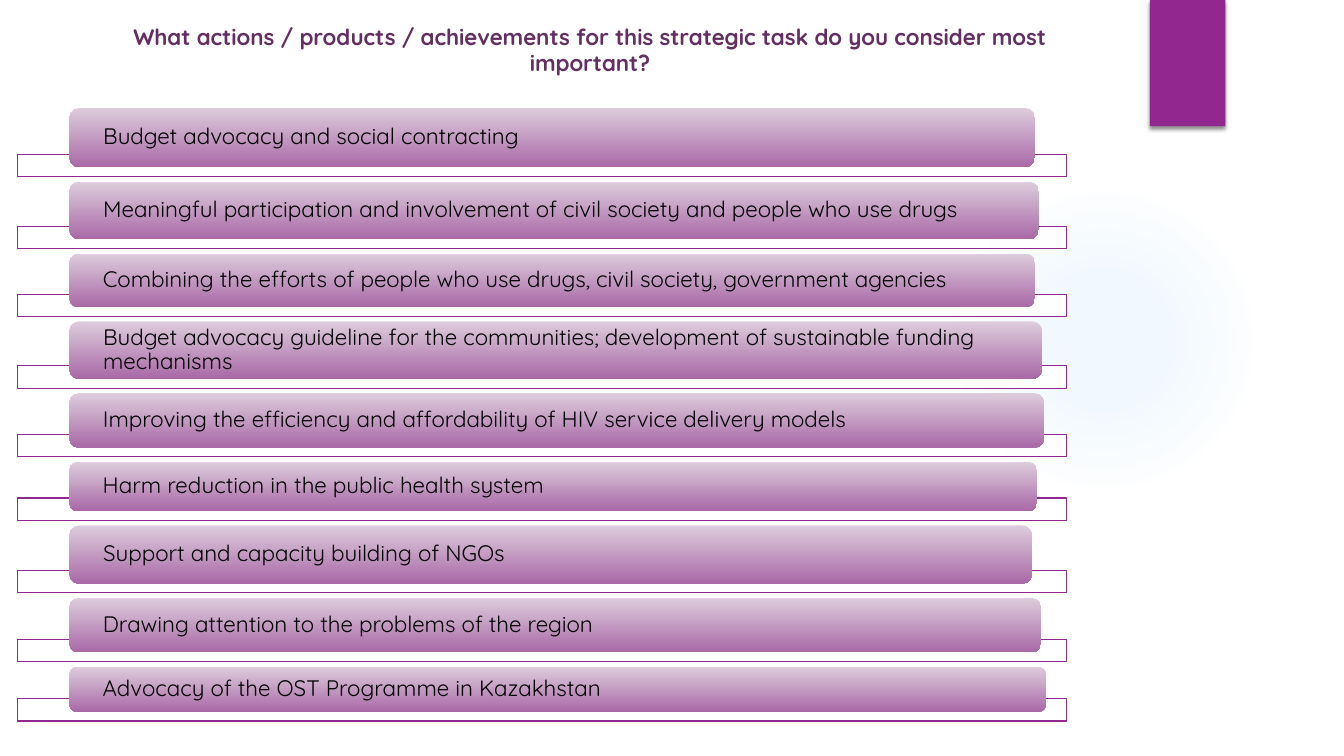
import lxml.etree
import pptx
import pptx.dml.color
import pptx.enum.shapes
import pptx.enum.text
import pptx.oxml.ns
import pptx.util

Cm = pptx.util.Cm
Pt = pptx.util.Pt
RGB = pptx.dml.color.RGBColor
Shape = pptx.enum.shapes.MSO_SHAPE
Align = pptx.enum.text.PP_ALIGN
Anchor = pptx.enum.text.MSO_ANCHOR
qn = pptx.oxml.ns.qn

FONT = "Quicksand"
WHITE = RGB(0xFF, 0xFF, 0xFF)
BLACK = RGB(0x00, 0x00, 0x00)
PURPLE = RGB(0x92, 0x27, 0x8F)
PLUM = RGB(0x63, 0x2E, 0x62)
PALE = RGB(0xDD, 0xCC, 0xDC)
MAUVE = RGB(0xA9, 0x69, 0xA7)
SKY = RGB(0x45, 0xA5, 0xED)

TITLE = ("What actions / products / achievements for this strategic task "
         "do you consider most important?")
ITEMS = [
    ("Budget advocacy and social contracting", 24.33, 1.5),
    ("Meaningful participation and involvement of civil society and people who use drugs",
     24.43, 1.45),
    ("Combining the efforts of people who use drugs, civil society, government agencies",
     24.33, 1.35),
    ("Budget advocacy guideline for the communities; development of sustainable funding "
     "mechanisms", 24.51, 1.45),
    ("Improving the efficiency and affordability of HIV service delivery models", 24.56, 1.37),
    ("Harm reduction in the public health system", 24.38, 1.24),
    ("Support and capacity building of NGOs", 24.26, 1.47),
    ("Drawing attention to the problems of the region", 24.49, 1.37),
    ("Advocacy of the OST Programme in Kazakhstan", 24.61, 1.14),
]


def add_xml(node, tag, **attrs):
    """Append a drawing element with its attributes and return it."""
    child = lxml.etree.SubElement(node, qn(tag))
    for name, value in attrs.items():
        child.set(name, str(value))
    return child


def add_tint(node, color, alpha):
    """Append a colour with an opacity in percent."""
    add_xml(add_xml(node, "a:srgbClr", val=color), "a:alpha", val=alpha * 1000)


def add_form(slide, kind, box, fill=None, line=None):
    """Add a preset shape without shadow in a box given in centimetres."""
    form = slide.shapes.add_shape(kind, *map(Cm, box))
    form.shadow.inherit = False
    if fill is None:
        form.fill.background()
    else:
        form.fill.solid()
        form.fill.fore_color.rgb = fill
    if line is None:
        form.line.fill.background()
    else:
        form.line.color.rgb = line
        form.line.width = Pt(0.75)
    return form


def set_text(form, text, color=BLACK, bold=False, align=Align.LEFT, inset=0.25, lead=1.0):
    """Write one paragraph into a shape and format it."""
    frame = form.text_frame
    frame.word_wrap = True
    frame.vertical_anchor = Anchor.MIDDLE
    frame.margin_left = frame.margin_right = Cm(inset)
    frame.margin_top = frame.margin_bottom = 0
    para = frame.paragraphs[0]
    para.alignment = align
    para.line_spacing = lead
    run = para.add_run()
    run.text = text
    run.font.name = FONT
    run.font.size = Pt(16)
    run.font.bold = bold
    run.font.color.rgb = color


def add_glow(slide, box):
    """Add the soft round glow behind the list."""
    props = add_form(slide, Shape.OVAL, box)._element.spPr
    grad = lxml.etree.Element(qn("a:gradFill"))
    stops = add_xml(grad, "a:gsLst")
    for place, alpha in ((0, 7), (36, 6), (69, 0)):
        add_tint(add_xml(stops, "a:gs", pos=place * 1000), SKY, alpha)
    path = add_xml(grad, "a:path", path="circle")
    add_xml(path, "a:fillToRect", l=50000, t=50000, r=50000, b=50000)
    props.replace(props.find(qn("a:noFill")), grad)


def add_tab(slide, box):
    """Add the purple tab with its drop shadow."""
    tab = add_form(slide, Shape.RECTANGLE, box, fill=PURPLE)
    effects = tab._element.spPr.find(qn("a:effectLst"))
    shade = add_xml(effects, "a:outerShdw", blurRad=Pt(3), dist=Pt(2), dir=90 * 60000,
                    rotWithShape=0)
    add_tint(shade, BLACK, 45)


def add_title(slide, box):
    """Add the centred heading."""
    title = slide.shapes.add_textbox(*map(Cm, box))
    set_text(title, TITLE, color=PLUM, bold=True, align=Align.CENTER)


def add_item(slide, box, text, width):
    """Add a shaded bar over the outlined frame at its foot."""
    left, top, span, height = box
    frame = add_form(slide, Shape.RECTANGLE, (left, top + height - 0.33, span, 0.56),
                     fill=WHITE, line=PURPLE)
    tint = frame._element.spPr.find(qn("a:solidFill")).find(qn("a:srgbClr"))
    add_xml(tint, "a:alpha", val=90000)
    bar = add_form(slide, Shape.ROUNDED_RECTANGLE, (left + 1.32, top, width, height))
    bar.fill.gradient()
    bar.fill.gradient_angle = 270
    for stop, color in zip(bar.fill.gradient_stops, (PALE, MAUVE)):
        stop.color.rgb = color
    set_text(bar, text, inset=0.78, lead=0.9)


def add_list(slide, left, top, span, gap):
    """Stack the items downwards with an equal gap."""
    for text, width, height in ITEMS:
        add_item(slide, (left, top, span, height), text, width)
        top += height + gap


def main():
    """Build and save the slide."""
    deck = pptx.Presentation()
    deck.slide_width, deck.slide_height = Cm(33.87), Cm(19.05)
    slide = deck.slides.add_slide(deck.slide_layouts[6])
    add_glow(slide, (23.9, 4.65, 7.82, 7.82))
    add_tab(slide, (28.98, 0, 1.9, 3.18))
    add_title(slide, (1.8, 0.41, 26.14, 1.68))
    add_list(slide, left=0.43, top=2.72, span=26.44, gap=0.36)
    deck.save("out.pptx")


if __name__ == "__main__":
    main()
